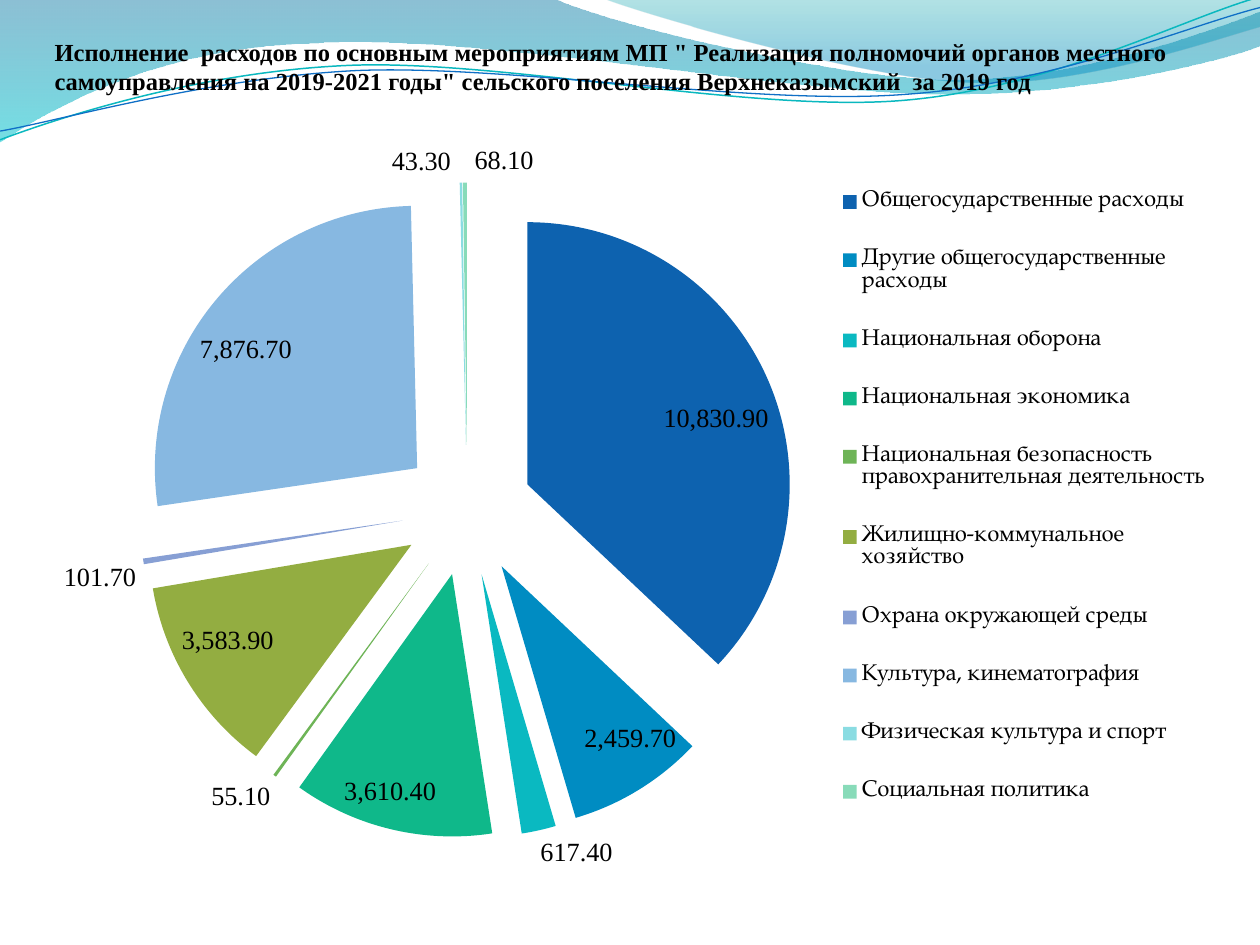
from lxml.etree import SubElement
from pptx import Presentation
from pptx.chart.data import CategoryChartData
from pptx.dml.color import RGBColor
from pptx.enum.chart import XL_CHART_TYPE, XL_LABEL_POSITION, XL_LEGEND_POSITION
from pptx.enum.text import MSO_ANCHOR
from pptx.oxml import parse_xml
from pptx.oxml.ns import nsdecls, qn
from pptx.util import Pt

TITLE = (
    'Исполнение  расходов по основным мероприятиям МП " Реализация полномочий '
    'органов местного самоуправления на 2019-2021 годы" сельского поселения '
    'Верхнеказымский  за 2019 год'
)
EXPENSES = [
    ("Общегосударственные расходы", 10830.9, "0D62AF"),
    ("Другие общегосударственные расходы", 2459.7, "008CC2"),
    ("Национальная оборона", 617.4, "0AB9C1"),
    ("Национальная экономика", 3610.4, "0FB88A"),
    ("Национальная безопасность правохранительная деятельность", 55.1, "6EB457"),
    ("Жилищно-коммунальное хозяйство", 3583.9, "93AD41"),
    ("Охрана окружающей среды", 101.7, "879FD4"),
    ("Культура, кинематография", 7876.7, "87B8E1"),
    ("Физическая культура и спорт", 43.3, "8ADCE2"),
    ("Социальная политика", 68.1, "88DBB9"),
]
LEFT_WAVE = [
    (0, 0), (316.8, -0.7),
    (342.7, 12.2, 478.1, 45.4, 545.8, 45.4), (614.2, 45.4, 689.8, 18.7, 720, 6.5),
    (720.7, 25.9),
    (707.8, 31.7, 626.4, 54.7, 537.1, 54), (447.8, 53.3, 275, 20.2, 185, 24.5),
    (92.9, 25.9, 33.1, 59.8, -0.7, 81.4),
]
RIGHT_WAVE = [
    (344.9, -0.7),
    (366.5, 7.9, 491, 44.6, 553.7, 46.8), (616.3, 49.7, 691.9, 23, 720, 15.1),
    (720, 0),
]
TEAL_LINE = [
    (0, 79.9), (34.6, 67, 113.8, 41, 199.4, 37.4),
    (284.4, 33.8, 427, 64.1, 513.4, 57.6), (599.8, 51.1, 675.4, 10.8, 718.6, -1.4),
]
BLUE_LINE = [
    (0, 74.9), (33.8, 69.1, 118.1, 44.6, 203.8, 40.3),
    (290.2, 36.7, 429.8, 60.5, 516.2, 54), (601.9, 48.2, 677.5, 15.1, 720, 4.3),
]


def color(value):
    """Turn a hex string into a colour."""
    return RGBColor.from_string(value)


def set_font(font, name, size, bold=False):
    """Give a font its face, size and weight in black."""
    font.name, font.size, font.bold = name, Pt(size), bold
    font.color.rgb = color("000000")


def add_outline(page, outline, close):
    """Draw a freeform of straight and cubic segments without shadow."""
    anchors = [(segment[-2] * 100, segment[-1] * 100) for segment in outline]
    builder = page.shapes.build_freeform(*anchors[0], scale=Pt(0.01))
    builder.add_line_segments(anchors[1:], close=close)
    shape = builder.convert_to_shape()
    shape.shadow.inherit = False
    left, top = (min(values) for values in zip(*anchors))
    lines = list(shape._element.spPr.iter(qn("a:lnTo")))
    for line, segment in zip(lines, outline[1:]):
        if len(segment) == 6:
            line.tag = qn("a:cubicBezTo")
            controls = zip(segment[0:4:2], segment[1:4:2])
            for index, (x, y) in enumerate(controls):
                point = line.makeelement(qn("a:pt"), {
                    "x": str(round(x * 100 - left)), "y": str(round(y * 100 - top))})
                line.insert(index, point)
    return shape


def add_wave(page, outline, stops):
    """Draw a wave with a translucent gradient from top to bottom."""
    shape = add_outline(page, outline, True)
    shape.line.fill.background()
    shape.fill.gradient()
    shape.fill.gradient_angle = 270
    for stop, (position, value, _) in zip(shape.fill.gradient_stops, stops):
        stop.position = position
        stop.color.rgb = color(value)
    tags = shape._element.spPr.iter(qn("a:srgbClr"))
    for tag, (_, _, opacity) in zip(tags, stops):
        SubElement(tag, qn("a:alpha"), val=str(opacity * 1000))


def add_curve(page, outline, value, width):
    """Draw an open curved line."""
    shape = add_outline(page, outline, False)
    shape.fill.background()
    shape.line.color.rgb = color(value)
    shape.line.width = Pt(width)


def add_title(page):
    """Write the heading."""
    box = page.shapes.add_textbox(Pt(31.2), Pt(9.4), Pt(674.6), Pt(62.6))
    frame = box.text_frame
    frame.word_wrap = True
    frame.vertical_anchor = MSO_ANCHOR.BOTTOM
    frame.margin_left = frame.margin_right = 0
    frame.margin_top, frame.margin_bottom = Pt(3.6), Pt(17.3)
    para = frame.paragraphs[0]
    para.text = TITLE
    set_font(para.font, "Times New Roman", 14, True)


def make_layout(*percents, inner=False):
    """Make a manual layout from left, top, width and height in percent."""
    target = '<c:layoutTarget val="inner"/>' if inner else ""
    sides = "".join(f'<c:{side} val="{percent / 100}"/>'
                    for side, percent in zip("xywh", percents))
    return parse_xml(
        f'<c:layout {nsdecls("c")}><c:manualLayout>{target}'
        f'<c:xMode val="edge"/><c:yMode val="edge"/>{sides}'
        '</c:manualLayout></c:layout>'
    )


def place(element, layout):
    """Replace the layout of a plot area or legend."""
    for old in element.findall(qn("c:layout")):
        element.remove(old)
    position = element.find(qn("c:legendPos"))
    element.insert(0 if position is None else element.index(position) + 1, layout)


def add_pie(page):
    """Add the exploded pie of expenses with its legend."""
    data = CategoryChartData(number_format="#,##0.00")
    data.categories = [name for name, _, _ in EXPENSES]
    data.add_series("Series 1", [amount for _, amount, _ in EXPENSES])
    chart = page.shapes.add_chart(
        XL_CHART_TYPE.PIE, Pt(25.2), Pt(66.2), Pt(674.6), Pt(449.3), data).chart
    chart.has_title = False
    set_font(chart.font, "TeX Gyre Pagella", 10)

    plot = chart.plots[0]
    plot.vary_by_categories = True
    series = plot.series[0]
    explosion = parse_xml(f'<c:explosion {nsdecls("c")} val="25"/>')
    series._element.find(qn("c:cat")).addprevious(explosion)
    for index, (_, _, value) in enumerate(EXPENSES):
        fill = series.points[index].format.fill
        fill.solid()
        fill.fore_color.rgb = color(value)

    labels = series.data_labels
    labels.show_value = True
    labels.number_format, labels.number_format_is_linked = "#,##0.00", False
    labels.position = XL_LABEL_POSITION.BEST_FIT
    set_font(labels.font, "Times New Roman", 15)

    chart.has_legend = True
    legend = chart.legend
    legend.position = XL_LEGEND_POSITION.RIGHT
    legend.include_in_layout = False
    set_font(legend.font, "TeX Gyre Pagella", 13)
    place(legend._element, make_layout(67, 5, 32, 87))
    place(chart._chartSpace.chart.plotArea, make_layout(8, 8.5, 55.7, 83.4, inner=True))


def main():
    """Build and save the slide."""
    deck = Presentation()
    deck.slide_width, deck.slide_height = Pt(720), Pt(540)
    page = deck.slides.add_slide(deck.slide_layouts[6])
    add_wave(page, LEFT_WAVE, [(0, "0074A1", 45), (1, "00C6CF", 55)])
    add_wave(page, RIGHT_WAVE, [(0, "00A1A9", 30), (0.8, "008BBF", 45)])
    add_curve(page, TEAL_LINE, "0AB8BF", 0.85)
    add_curve(page, BLUE_LINE, "0F6FC6", 0.75)
    add_title(page)
    add_pie(page)
    deck.save("out.pptx")


if __name__ == "__main__":
    main()
